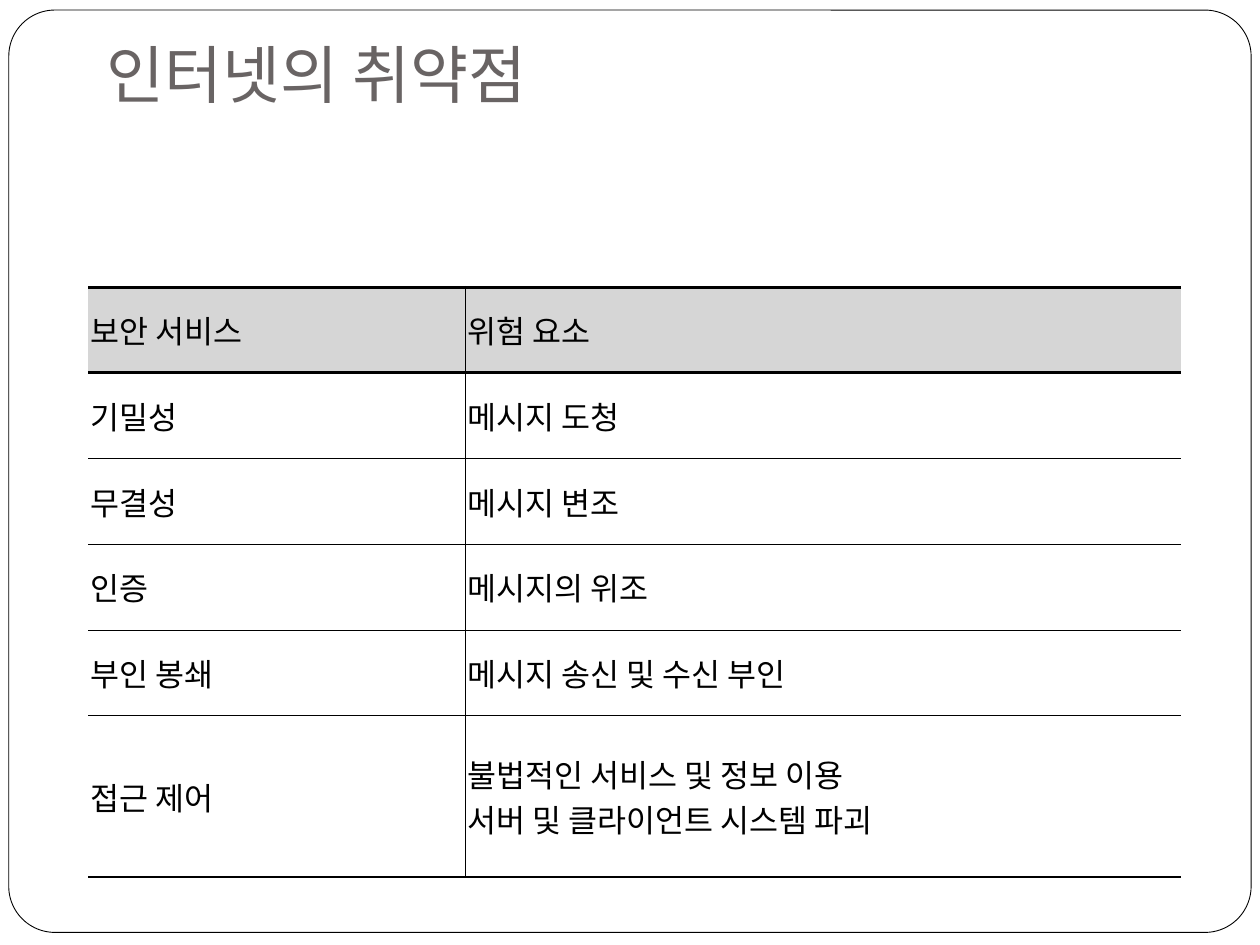
"""Build a slide that lists the weak points of the internet by security service."""
import dataclasses
import typing

import lxml.etree
import pptx
import pptx.dml.color
import pptx.enum.shapes
import pptx.enum.text
import pptx.oxml.ns
import pptx.util

RGB = pptx.dml.color.RGBColor.from_string
ANCHOR = pptx.enum.text.MSO_ANCHOR
WIDTH, HEIGHT = pptx.util.Inches(10), pptx.util.Inches(7.5)


@dataclasses.dataclass(frozen=True)
class Theme:
    """Colours, fonts, type sizes and line widths."""

    paper: str = "FFFFFF"
    ink: str = "000000"
    title: str = "696464"
    header: str = "D6D6D6"
    title_font: str = "Roboto"
    body_font: str = "Noto Sans CJK KR"
    title_size: float = 36
    body_size: float = 18
    frame_line: float = 0.5
    thin: float = 0.28
    outer: float = 1.7
    header_rule: float = 1.98


@dataclasses.dataclass(frozen=True)
class Area:
    """A rectangle in shares of the slide's size."""

    left: float
    top: float
    width: float
    height: float

    def lengths(self) -> tuple[int, ...]:
        """Return left, top, width and height as lengths."""
        return (int(self.left * WIDTH), int(self.top * HEIGHT),
                int(self.width * WIDTH), int(self.height * HEIGHT))


class Threat(typing.NamedTuple):
    """One table row: a security service and what endangers it."""

    service: str
    risk: str
    height: float = 0.68


THEME = Theme()
FRAME = Area(0.007, 0.08 / 7.5, 0.986, 7.32 / 7.5)
TITLE = Area(0.075, 0.08 / 7.5, 0.85, 0.12)
TABLE = Area(0.07, 2.28 / 7.5, 0.867, 4.68 / 7.5)
COLUMNS = (2.99, 5.68)
THREATS = (
    Threat("보안 서비스", "위험 요소"),
    Threat("기밀성", "메시지 도청"),
    Threat("무결성", "메시지 변조"),
    Threat("인증", "메시지의 위조"),
    Threat("부인 봉쇄", "메시지 송신 및 수신 부인"),
    Threat("접근 제어", "불법적인 서비스 및 정보 이용\n서버 및 클라이언트 시스템 파괴", 1.28),
)


def apply(target: typing.Any, values: dict[str, typing.Any]) -> None:
    """Set each named attribute on the target."""
    for name, value in values.items():
        setattr(target, name, value)


def write(frame: typing.Any, text: str, font: str, size: float, color: str) -> None:
    """Write the text, one paragraph a line, in one type style."""
    frame.text = text
    for paragraph in frame.paragraphs:
        for run in paragraph.runs:
            apply(run.font, {"name": font, "size": pptx.util.Pt(size), "bold": False})
            run.font.color.rgb = RGB(color)
            east_asian = lxml.etree.SubElement(run.font._element, pptx.oxml.ns.qn("a:ea"))
            east_asian.set("typeface", THEME.body_font)


def draw_frame(slide: typing.Any) -> None:
    """Draw the rounded border of the slide."""
    shape = slide.shapes.add_shape(
        pptx.enum.shapes.MSO_SHAPE.ROUNDED_RECTANGLE, *FRAME.lengths())
    shape.adjustments[0] = 0.05
    shape.shadow.inherit = False
    shape.fill.solid()
    shape.fill.fore_color.rgb = RGB(THEME.paper)
    shape.line.color.rgb = RGB(THEME.ink)
    shape.line.width = pptx.util.Pt(THEME.frame_line)


def draw_title(slide: typing.Any, text: str) -> None:
    """Draw the slide title."""
    frame = slide.shapes.add_textbox(*TITLE.lengths()).text_frame
    apply(frame, {"word_wrap": True, "vertical_anchor": ANCHOR.BOTTOM,
                  "margin_bottom": pptx.util.Inches(0.1)})
    write(frame, text, THEME.title_font, THEME.title_size, THEME.title)


def set_borders(cell: typing.Any, widths: dict[str, float]) -> None:
    """Give the cell its borders; a width of zero leaves a side open."""
    properties = cell._tc.get_or_add_tcPr()
    for index, (side, width) in enumerate(widths.items()):
        line = lxml.etree.Element(pptx.oxml.ns.qn(f"a:ln{side}"))
        line.set("w", str(int(pptx.util.Pt(width))))
        if width:
            fill = lxml.etree.SubElement(line, pptx.oxml.ns.qn("a:solidFill"))
            lxml.etree.SubElement(fill, pptx.oxml.ns.qn("a:srgbClr")).set("val", THEME.ink)
        else:
            lxml.etree.SubElement(line, pptx.oxml.ns.qn("a:noFill"))
        properties.insert(index, line)


def draw_table(slide: typing.Any, threats: tuple[Threat, ...]) -> None:
    """Draw the table of services and risks."""
    table = slide.shapes.add_table(len(threats), len(COLUMNS), *TABLE.lengths()).table
    apply(table, {"first_row": False, "horz_banding": False})
    for column, width in zip(table.columns, COLUMNS):
        column.width = pptx.util.Inches(width)
    rules = [THEME.outer, THEME.header_rule,
             *[THEME.thin] * (len(threats) - 2), THEME.outer]
    sides = (0, THEME.thin, 0)
    margins = {f"margin_{side}": pptx.util.Inches(0.02)
               for side in ("left", "right", "top", "bottom")}
    for row, threat in enumerate(threats):
        table.rows[row].height = pptx.util.Inches(threat.height)
        for column, text in enumerate((threat.service, threat.risk)):
            cell = table.cell(row, column)
            apply(cell, {"vertical_anchor": ANCHOR.MIDDLE, **margins})
            write(cell.text_frame, text, THEME.body_font, THEME.body_size, THEME.ink)
            if row == 0:
                cell.fill.solid()
                cell.fill.fore_color.rgb = RGB(THEME.header)
            else:
                cell.fill.background()
            set_borders(cell, {"L": sides[column], "R": sides[column + 1],
                               "T": rules[row], "B": rules[row + 1]})


def main() -> None:
    """Build and save the presentation."""
    presentation = pptx.Presentation()
    apply(presentation, {"slide_width": WIDTH, "slide_height": HEIGHT})
    slide = presentation.slides.add_slide(presentation.slide_layouts[6])
    draw_frame(slide)
    draw_title(slide, "인터넷의 취약점")
    draw_table(slide, THREATS)
    presentation.save("out.pptx")


if __name__ == "__main__":
    main()
